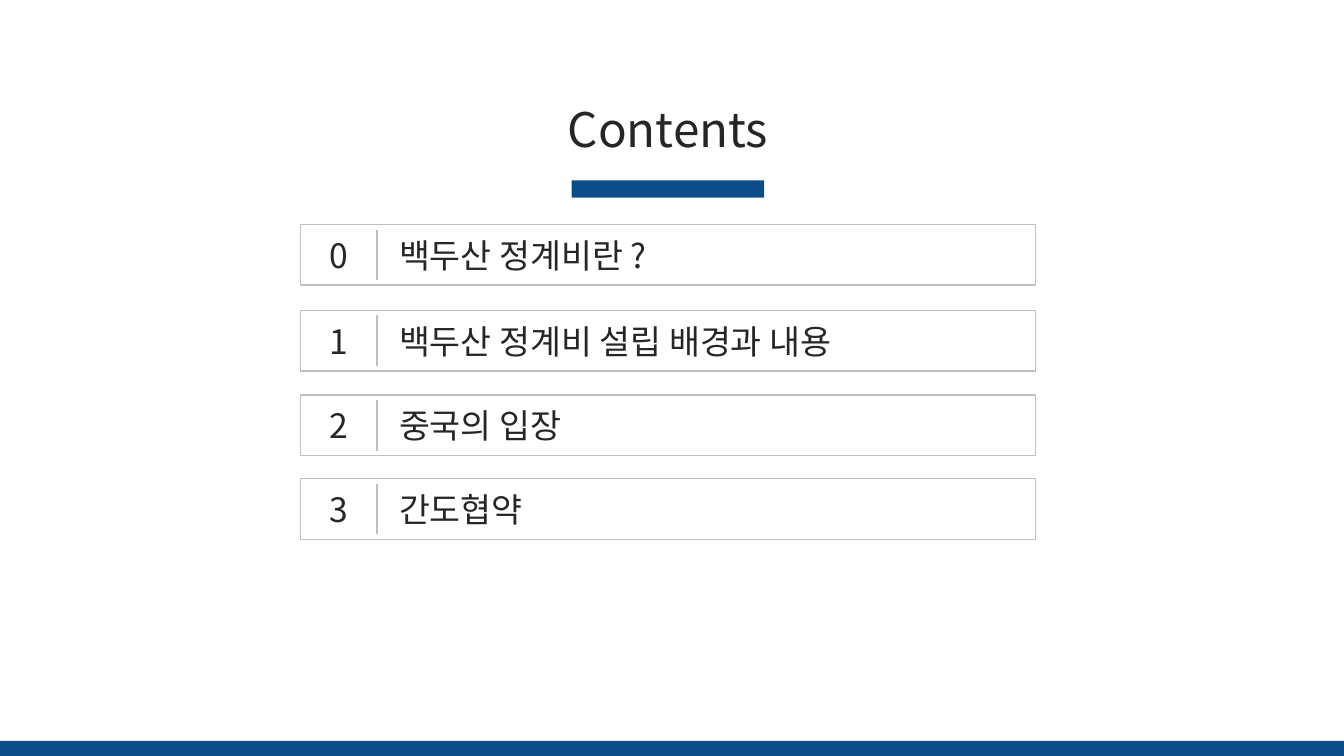
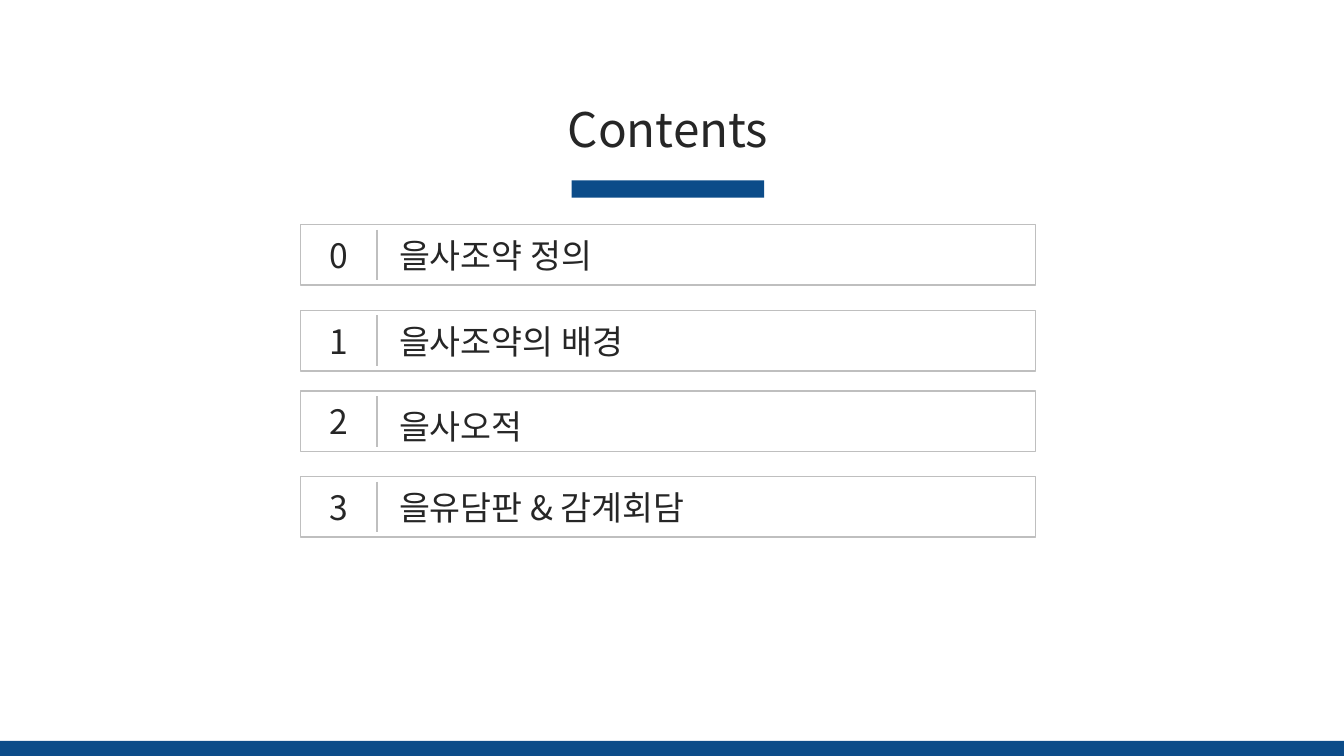
from lxml.etree import SubElement
from pptx import Presentation
from pptx.dml.color import RGBColor
from pptx.enum.shapes import MSO_CONNECTOR, MSO_SHAPE
from pptx.enum.text import MSO_ANCHOR, MSO_AUTO_SIZE, PP_ALIGN
from pptx.oxml.ns import qn
from pptx.util import Inches, Pt

NAVY = RGBColor(0x0C, 0x4C, 0x89)
INK = RGBColor(0x26, 0x26, 0x26)
GRAY = RGBColor(0xBF, 0xBF, 0xBF)
WHITE = RGBColor(0xFF, 0xFF, 0xFF)
FONT = "Noto Sans CJK KR"
PAGE_WIDTH, PAGE_HEIGHT = 13.33, 7.5
ROW_LEFT, ROW_WIDTH, ROW_HEIGHT = 2.98, 7.29, 0.6
ROW_INSET = 0.05

CONTENTS = [
    [
        (2.23, "백두산 정계비란 ?", 0),
        (3.08, "백두산 정계비 설립 배경과 내용", 0),
        (3.92, "중국의 입장", 0),
        (4.75, "간도협약", 0),
    ],
    [
        (2.23, "을사조약 정의", 0),
        (3.08, "을사조약의 배경", 0),
        (3.88, "을사오적", 0.05),
        (4.73, "을유담판 & 감계회담", 0),
    ],
]


def write_text(box, text, size, align, margin=0.1):
    """Fill a box with one vertically centred line of text."""
    frame = box.text_frame
    frame.text = text
    frame.word_wrap = True
    frame.auto_size = MSO_AUTO_SIZE.NONE
    frame.vertical_anchor = MSO_ANCHOR.MIDDLE
    frame.margin_left = frame.margin_right = Inches(margin)
    frame.margin_top = frame.margin_bottom = Inches(0.05)
    para = frame.paragraphs[0]
    para.alignment = align
    para.line_spacing = 1.0
    font = para.runs[0].font
    font.name = FONT
    font.size = Pt(size)
    font.color.rgb = INK
    SubElement(font._element, qn("a:ea")).set("typeface", FONT)


def add_bar(shapes, left, top, width, height):
    """Add a solid navy bar."""
    bar = shapes.add_shape(
        MSO_SHAPE.RECTANGLE, Inches(left), Inches(top), Inches(width), Inches(height)
    )
    bar.shadow.inherit = False
    bar.fill.solid()
    bar.fill.fore_color.rgb = NAVY
    bar.line.fill.background()


def add_title(page, left, top, width, height):
    """Place the centred title with the bar below it."""
    title = page.shapes.title
    title.left, title.top = Inches(left), Inches(top)
    title.width, title.height = Inches(width), Inches(height)
    write_text(title, "Contents", 34, PP_ALIGN.CENTER)
    bar_width = 1.91
    add_bar(page.shapes, left + (width - bar_width) / 2, top + 0.85, bar_width, 0.17)


def add_row(page, left, top, number, label, label_shift):
    """Add an outlined row with a number, a divider and a label."""
    row = page.shapes.add_group_shape().shapes
    frame = row.add_shape(
        MSO_SHAPE.RECTANGLE, Inches(left), Inches(top), Inches(ROW_WIDTH), Inches(ROW_HEIGHT)
    )
    frame.shadow.inherit = False
    frame.fill.background()
    frame.line.color.rgb = GRAY
    frame.line.width = Pt(1)

    inner_top, inner_height = top + ROW_INSET, ROW_HEIGHT - 2 * ROW_INSET
    divider_x = Inches(left + 0.76)
    divider = row.add_connector(
        MSO_CONNECTOR.STRAIGHT,
        divider_x, Inches(inner_top), divider_x, Inches(inner_top + inner_height),
    )
    divider.line.color.rgb = GRAY
    divider.line.width = Pt(1)
    SubElement(divider._element.spPr, qn("a:effectLst"))

    number_box = row.add_textbox(
        Inches(left + 0.18), Inches(inner_top), Inches(0.4), Inches(inner_height)
    )
    write_text(number_box, str(number), 24, PP_ALIGN.CENTER, margin=0)
    label_box = row.add_textbox(
        Inches(left + 0.88), Inches(inner_top + label_shift), Inches(6.12), Inches(inner_height)
    )
    write_text(label_box, label, 24, PP_ALIGN.LEFT)


def add_contents_page(deck, rows):
    """Build one contents slide."""
    page = deck.slides.add_slide(deck.slide_layouts[5])
    add_title(page, 4.3, 0.94, 4.65, 0.67)
    for number, (top, label, label_shift) in enumerate(rows):
        add_row(page, ROW_LEFT, top, number, label, label_shift)
    add_bar(page.shapes, 0, 7.35, PAGE_WIDTH, PAGE_HEIGHT - 7.35)


def main():
    """Build and save the deck."""
    deck = Presentation()
    deck.slide_width, deck.slide_height = Inches(PAGE_WIDTH), Inches(PAGE_HEIGHT)
    background = deck.slide_master.background.fill
    background.solid()
    background.fore_color.rgb = WHITE
    for rows in CONTENTS:
        add_contents_page(deck, rows)
    deck.save("out.pptx")


if __name__ == "__main__":
    main()
